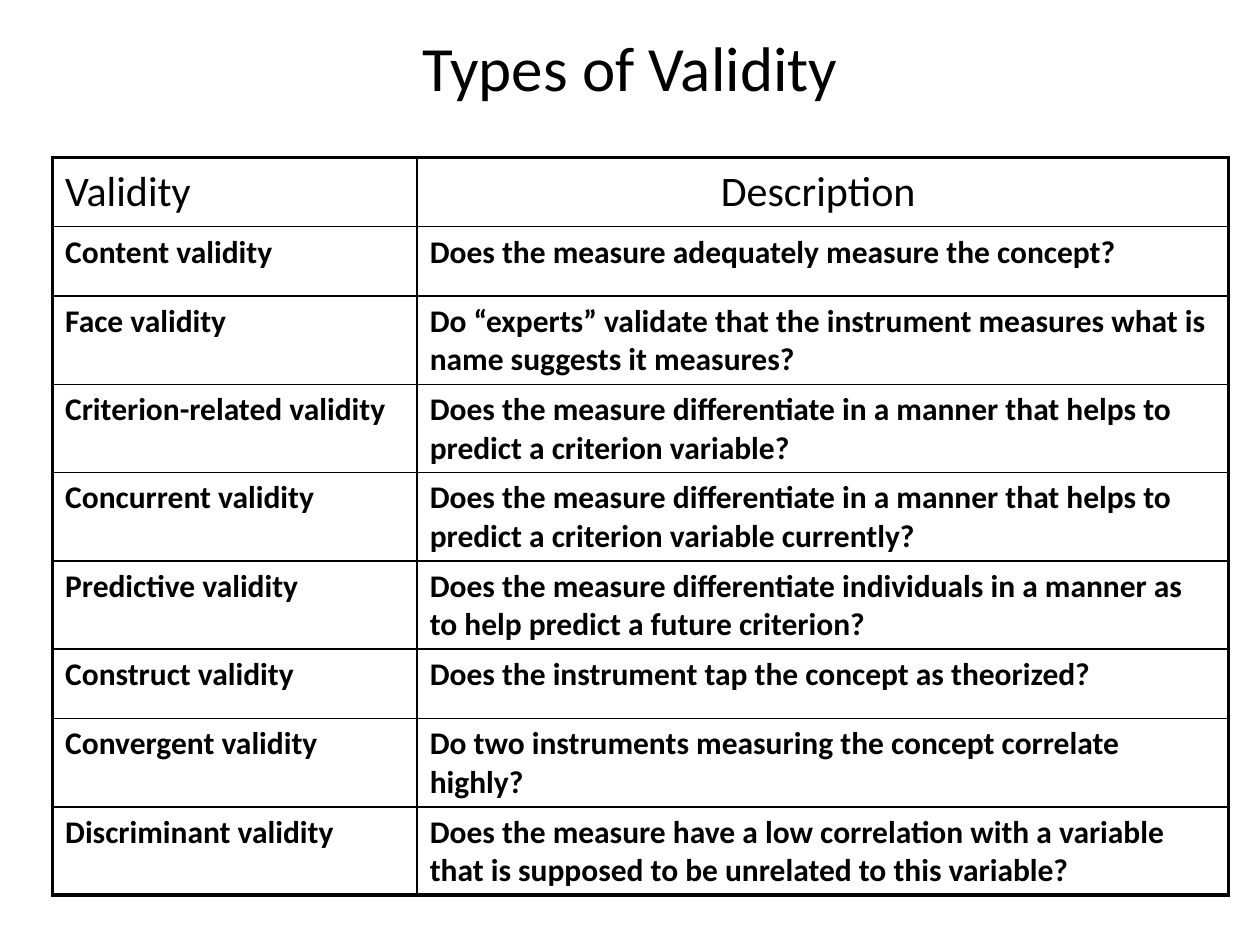
from dataclasses import dataclass

from lxml.etree import SubElement
from pptx import Presentation
from pptx.dml.color import RGBColor
from pptx.enum.text import MSO_ANCHOR as Anchor, PP_ALIGN as Align
from pptx.oxml.ns import qn
from pptx.util import Cm, Pt


@dataclass(frozen=True)
class Theme:
    font: str = "Calibri"
    ink: str = "000000"
    paper: str = "FFFFFF"
    title_size: float = 36
    header_size: float = 24
    body_size: float = 18
    outer_line: float = 2.25
    inner_line: float = 1


THEME = Theme()

HEADER = ("Validity", "Description ")
VALIDITY_TYPES = [
    ("Content validity", "Does the measure adequately measure the concept?"),
    ("Face validity", "Do “experts” validate that the instrument measures what is "
                      "name suggests it measures?"),
    ("Criterion-related validity", "Does the measure differentiate in a manner that helps to "
                                   "predict a criterion variable?"),
    ("Concurrent validity", "Does the measure differentiate in a manner that helps to "
                            "predict a criterion variable currently?"),
    ("Predictive validity", "Does the measure differentiate individuals in a manner as "
                            "to help predict a future criterion?"),
    ("Construct validity", "Does the instrument tap the concept as theorized?"),
    ("Convergent validity", "Do two instruments measuring the concept correlate highly?"),
    ("Discriminant validity", "Does the measure have a low correlation with a variable "
                              "that is supposed to be unrelated to this variable?"),
]


def write(frame, text, size=THEME.body_size, bold=False, align=Align.LEFT):
    frame.word_wrap = True
    paragraph = frame.paragraphs[0]
    paragraph.alignment = align
    run = paragraph.add_run()
    run.text = text
    run.font.name = THEME.font
    run.font.size = Pt(size)
    run.font.bold = bold
    run.font.color.rgb = RGBColor.from_string(THEME.ink)


def draw_borders(cell, widths):
    """Line the sides of a cell; widths are points for left, right, top, bottom."""
    properties = cell._tc.get_or_add_tcPr()
    for side, width in zip("LRTB", widths):
        line = SubElement(properties, qn(f"a:ln{side}"), w=str(Pt(width)))
        fill = SubElement(line, qn("a:solidFill"))
        SubElement(fill, qn("a:srgbClr"), val=THEME.ink)


def add_title(slide, left, top, width, height):
    title = slide.shapes.add_textbox(Cm(left), Cm(top), Cm(width), Cm(height))
    title.text_frame.vertical_anchor = Anchor.MIDDLE
    write(title.text_frame, "Types of Validity", size=THEME.title_size, align=Align.CENTER)


def add_validity_table(slide, left, top, width, height, type_share):
    """Place the table; type_share is the first column's part of the width."""
    rows = [HEADER, *VALIDITY_TYPES]
    table = slide.shapes.add_table(
        len(rows), len(HEADER), Cm(left), Cm(top), Cm(width), Cm(height)).table
    for column, share in zip(table.columns, (type_share, 1 - type_share)):
        column.width = Cm(width * share)

    last_row, last_column = len(rows) - 1, len(HEADER) - 1
    for r, texts in enumerate(rows):
        is_header = r == 0
        for c, text in enumerate(texts):
            cell = table.cell(r, c)
            at_edge = (c == 0, c == last_column, is_header, r == last_row)
            draw_borders(cell, [THEME.outer_line if edge else THEME.inner_line
                                for edge in at_edge])
            cell.fill.solid()
            cell.fill.fore_color.rgb = RGBColor.from_string(THEME.paper)
            cell.vertical_anchor = Anchor.MIDDLE if is_header else Anchor.TOP
            write(cell.text_frame, text,
                  size=THEME.header_size if is_header else THEME.body_size,
                  bold=not is_header,
                  align=Align.CENTER if is_header and c == last_column else Align.LEFT)


def main():
    deck = Presentation()
    deck.slide_width, deck.slide_height = Cm(25.4), Cm(19.05)
    slide = deck.slides.add_slide(deck.slide_layouts[6])
    add_title(slide, left=1.27, top=0.76, width=22.86, height=1.14)
    add_validity_table(slide, left=1.06, top=3.17, width=23.71, height=12.6, type_share=0.31)
    deck.save("out.pptx")


if __name__ == "__main__":
    main()
